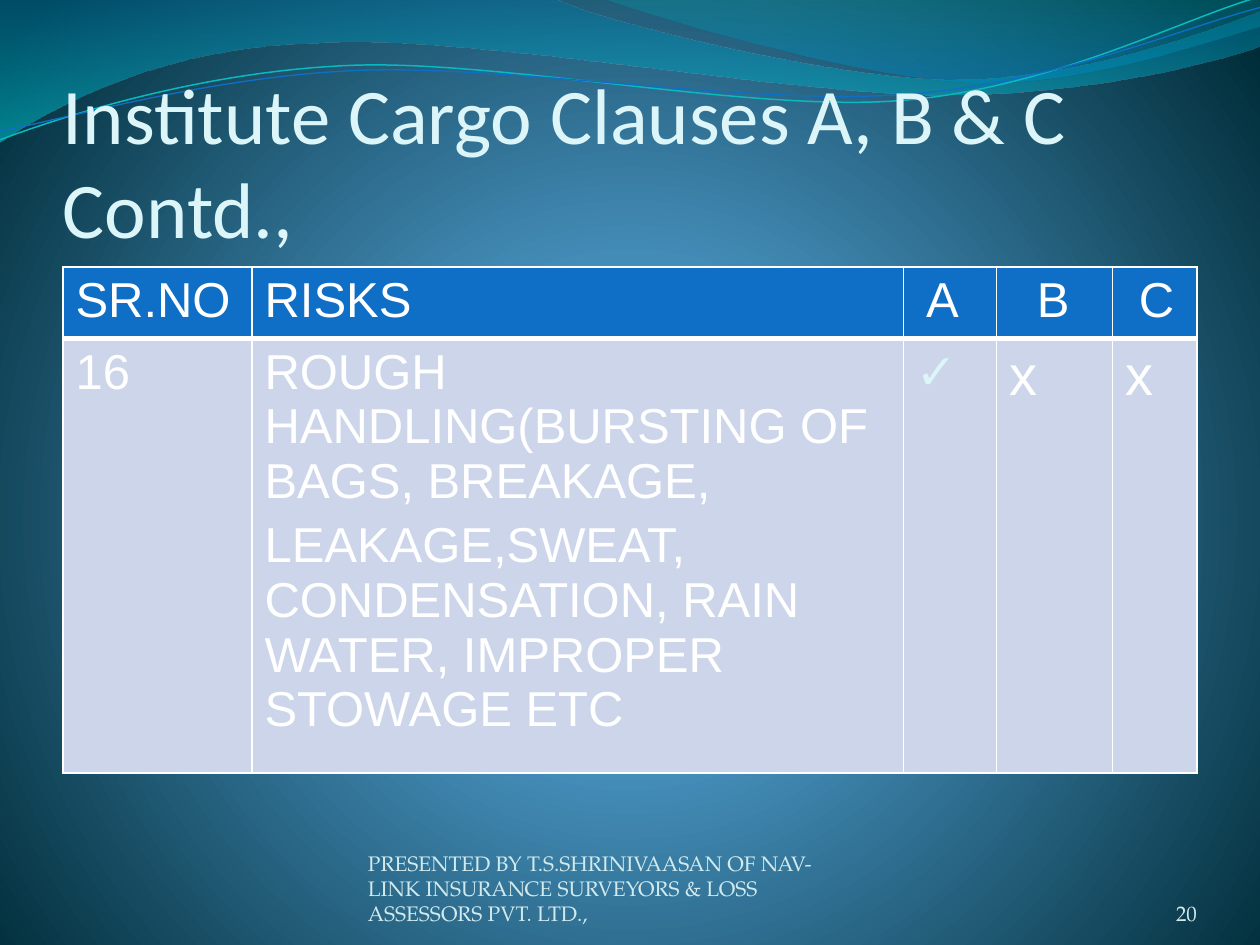
from dataclasses import dataclass
from typing import Optional

from lxml.etree import SubElement
from pptx import Presentation
from pptx.dml.color import RGBColor
from pptx.enum.text import MSO_ANCHOR as Anchor, PP_ALIGN as Align
from pptx.oxml import parse_xml
from pptx.oxml.ns import nsdecls, qn
from pptx.util import Cm, Pt

WHITE = RGBColor(0xFF, 0xFF, 0xFF)
ICE = RGBColor(0xDB, 0xF5, 0xF9)
PALE = RGBColor(0xD1, 0xEA, 0xEE)
BLUE = RGBColor(0x0F, 0x6F, 0xC6)
TEAL = RGBColor(0x0A, 0xB8, 0xBF)
LAVENDER = RGBColor(0xCC, 0xD5, 0xEA)
SKY = RGBColor(0x4A, 0xA0, 0xD6)
STEEL = RGBColor(0x4C, 0x98, 0xC7)
NIGHT = RGBColor(0x00, 0x2C, 0x38)
DEEP = RGBColor(0x00, 0x74, 0xA1)
CYAN = RGBColor(0x00, 0xC6, 0xCF)
SEA = RGBColor(0x00, 0xA1, 0xA9)
AZURE = RGBColor(0x00, 0x8B, 0xBF)

DOWNWARD = '<a:lin ang="5400000" scaled="1"/>'
RADIAL = ('<a:path path="circle"><a:fillToRect l="10000" t="110000" '
          'r="10000" b="100000"/></a:path>')


@dataclass
class Stop:
    position: int
    color: RGBColor
    opacity: int = 100


@dataclass
class Wave:
    """Start point, then steps of two numbers (line) or six (Bezier), in inches."""
    start: tuple
    steps: list
    stops: Optional[list] = None
    line: Optional[RGBColor] = None
    weight: float = 0


@dataclass
class Entry:
    paragraphs: list
    size: float = 28
    color: RGBColor = WHITE
    indent: float = 0.1


WAVES = [
    Wave((0, 0), [(4.4, -0.01), (4.76, 0.17, 6.64, 0.63, 7.58, 0.63),
                  (8.53, 0.63, 9.58, 0.26, 10, 0.09), (10.01, 0.36),
                  (9.83, 0.44, 8.7, 0.76, 7.46, 0.75),
                  (6.22, 0.75, 3.82, 0.28, 2.57, 0.34),
                  (1.29, 0.36, 0.46, 0.83, -0.01, 1.13)],
         stops=[Stop(0, DEEP, 45), Stop(100, CYAN, 55)]),
    Wave((4.79, -0.01), [(5.09, 0.11, 6.82, 0.62, 7.69, 0.65),
                         (8.56, 0.69, 9.61, 0.32, 10, 0.21), (10, 0)],
         stops=[Stop(0, SEA, 30), Stop(80, AZURE, 45)]),
    Wave((0, 1.11), [(0.48, 0.93, 1.58, 0.57, 2.77, 0.52),
                     (3.95, 0.47, 5.93, 0.89, 7.13, 0.8),
                     (8.33, 0.71, 9.38, 0.15, 9.98, -0.02)],
         line=TEAL, weight=0.85),
    Wave((0, 1.04), [(0.47, 0.96, 1.64, 0.61, 2.83, 0.56),
                     (4.03, 0.51, 5.97, 0.84, 7.17, 0.75),
                     (8.36, 0.67, 9.41, 0.21, 10, 0.06)],
         line=BLUE, weight=0.75),
]

COLUMNS = [1.5, 5.17, 0.74, 0.92, 0.67]
ROW_HEIGHT = 0.41
TABLE_HEIGHT = 4.03
ENTRIES = [
    [Entry(["SR.NO"]), Entry(["RISKS"]), Entry(["A"], indent=0.18),
     Entry(["B"], indent=0.32), Entry(["C"], indent=0.21)],
    [Entry(["16"]),
     Entry(["ROUGH HANDLING(BURSTING OF BAGS, BREAKAGE,",
            "LEAKAGE,SWEAT, CONDENSATION, RAIN WATER, IMPROPER STOWAGE ETC"]),
     Entry(["✓"], color=ICE), Entry(["x"], size=32), Entry(["x"], size=32)],
]


def inch(value: float) -> Cm:
    return Cm(value * 2.54)


def gradient(stops: list, direction: str):
    marks = "".join(
        f'<a:gs pos="{stop.position * 1000}"><a:srgbClr val="{stop.color}">'
        f'<a:alpha val="{stop.opacity * 1000}"/></a:srgbClr></a:gs>'
        for stop in stops)
    return parse_xml(f'<a:gradFill {nsdecls("a")} rotWithShape="1">'
                     f'<a:gsLst>{marks}</a:gsLst>{direction}</a:gradFill>')


def set_gradient(fill, parent, stops: list, direction: str) -> None:
    fill.solid()
    solid = parent.find(qn("a:solidFill"))
    parent.replace(solid, gradient(stops, direction))


def bend(shape, steps: list) -> None:
    """Join the three straight segments of each six-number step into one curve."""
    segments = iter(list(shape._element.iter(qn("a:lnTo"))))
    for step in steps:
        segment = next(segments)
        if len(step) == 6:
            curve = segment.makeelement(qn("a:cubicBezTo"))
            segment.addprevious(curve)
            for piece in (segment, next(segments), next(segments)):
                curve.append(piece[0])
                piece.getparent().remove(piece)


def draw_wave(page, wave: Wave) -> None:
    numbers = [inch(value) for step in [wave.start, *wave.steps] for value in step]
    points = list(zip(numbers[::2], numbers[1::2]))
    builder = page.shapes.build_freeform(*points[0])
    builder.add_line_segments(points[1:], close=wave.stops is not None)
    shape = builder.convert_to_shape()
    bend(shape, wave.steps)
    shape.shadow.inherit = False
    if wave.stops:
        set_gradient(shape.fill, shape.fill._xPr, wave.stops, DOWNWARD)
        shape.line.fill.background()
    else:
        shape.fill.background()
        shape.line.color.rgb = wave.line
        shape.line.width = Pt(wave.weight)


def write(para, text: str, *, size: float, font: str, color: RGBColor,
          align: Align = Align.LEFT, before: float = 0) -> None:
    para.alignment = align
    para.space_before = Pt(before)
    span = para.add_run()
    span.text = text
    span.font.size = Pt(size)
    span.font.name = font
    span.font.color.rgb = color


def add_text(page, text: str, place: tuple, *, top_inset: float = 0, **style) -> None:
    frame = page.shapes.add_textbox(*map(inch, place)).text_frame
    frame.word_wrap = True
    frame.vertical_anchor = Anchor.BOTTOM
    frame.margin_left = frame.margin_right = frame.margin_bottom = 0
    frame.margin_top = inch(top_inset)
    write(frame.paragraphs[0], text, **style)


def set_borders(cell, bottom: float) -> None:
    properties = cell._tc.get_or_add_tcPr()
    for side, weight in zip("LRTB", (1, 1, 1, bottom)):
        line = SubElement(properties, qn(f"a:ln{side}"), w=str(Pt(weight)))
        color = SubElement(SubElement(line, qn("a:solidFill")), qn("a:srgbClr"))
        color.set("val", str(WHITE))


def add_risk_table(page) -> None:
    place = map(inch, (0.5, 2.12, sum(COLUMNS), TABLE_HEIGHT))
    holder = page.shapes.add_table(len(ENTRIES), len(COLUMNS), *place)
    table = holder.table
    table.first_row = table.horz_banding = False
    for column, width in zip(table.columns, COLUMNS):
        column.width = inch(width)
    for index, (row, entries) in enumerate(zip(table.rows, ENTRIES)):
        row.height = inch(ROW_HEIGHT)
        for cell, entry in zip(row.cells, entries):
            set_borders(cell, bottom=1 if index else 3)
            cell.fill.solid()
            cell.fill.fore_color.rgb = LAVENDER if index else BLUE
            cell.margin_left = inch(entry.indent)
            frame = cell.text_frame
            for number, text in enumerate(entry.paragraphs):
                para = frame.add_paragraph() if number else frame.paragraphs[0]
                write(para, text, size=entry.size, font="Arial",
                      color=entry.color, before=entry.size * 0.2)
    holder.height = inch(TABLE_HEIGHT)


def main() -> None:
    deck = Presentation()
    deck.slide_width, deck.slide_height = inch(10), inch(7.5)
    page = deck.slides.add_slide(deck.slide_layouts[6])
    fill = page.background.fill
    set_gradient(fill, fill._xPr,
                 [Stop(0, SKY), Stop(25, STEEL), Stop(100, NIGHT)], RADIAL)
    for wave in WAVES:
        draw_wave(page, wave)
    add_text(page, "Institute Cargo Clauses A, B & C Contd.,", (0.5, 0.77, 9, 1.25),
             top_inset=0.05, size=45, font="Calibri", color=ICE)
    add_risk_table(page)
    small = dict(size=12, font="TeX Gyre Pagella", color=PALE)
    add_text(page, "PRESENTED BY T.S.SHRINIVAASAN OF NAV-LINK INSURANCE SURVEYORS "
             "& LOSS ASSESSORS PVT. LTD.,", (2.92, 6.95, 3.67, 0.4), **small)
    add_text(page, "20", (8.67, 6.95, 0.83, 0.4), align=Align.RIGHT, **small)
    deck.save("out.pptx")


if __name__ == "__main__":
    main()
